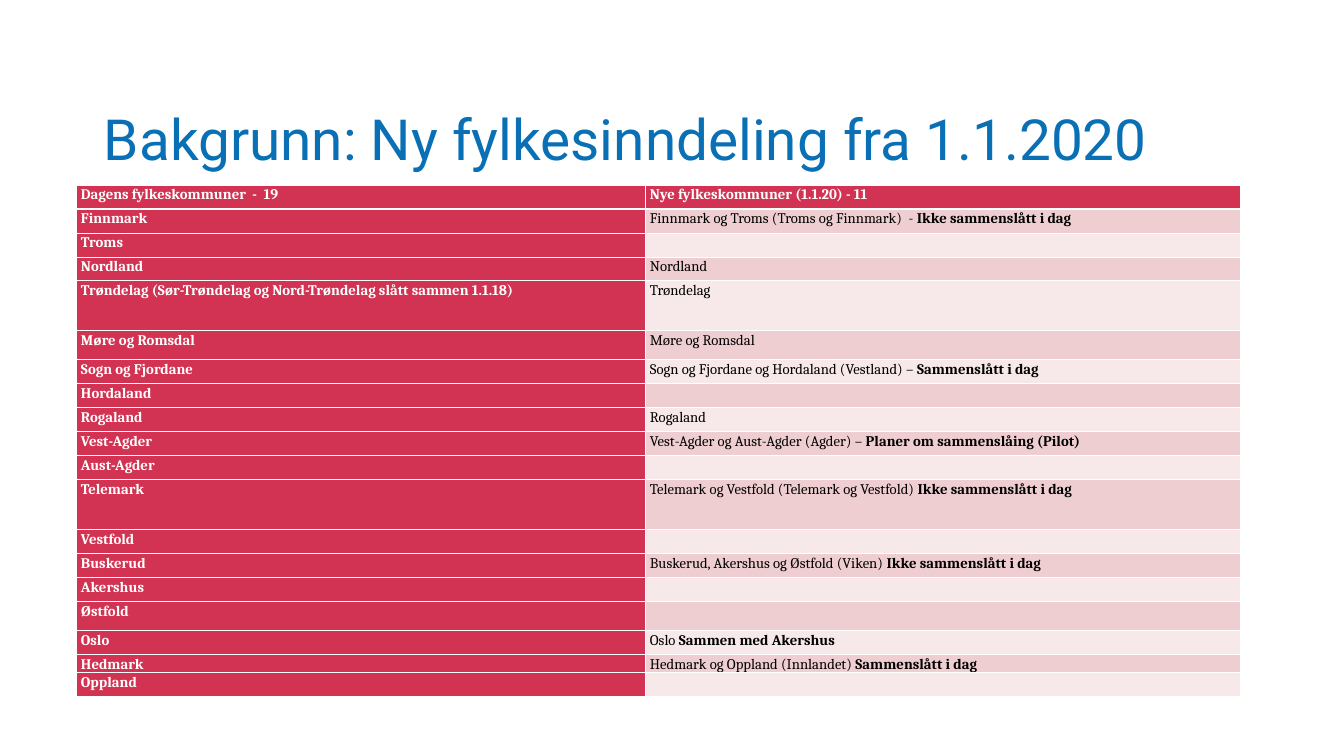
from dataclasses import dataclass

from lxml import etree
from pptx import Presentation
from pptx import util as u
from pptx.dml.color import RGBColor
from pptx.enum import text
from pptx.oxml.ns import qn

PX = 12095


@dataclass(frozen=True)
class Theme:
    blue: str = "0970B5"
    red: str = "D33352"
    rose: str = "EFCED1"
    pale: str = "F7E8E9"
    white: str = "FFFFFF"
    black: str = "000000"
    head: str = "Roboto"
    body: str = "Cambria"
    large: int = 54
    small: int = 14


class Deck:
    def __init__(self, theme, wide, high):
        self.theme = theme
        self.show = Presentation()
        self.show.slide_width, self.show.slide_height = wide * PX, high * PX
        self.slide = self.show.slides.add_slide(self.show.slide_layouts[5])

    def style(self, run, face, size, color, bold=False):
        font = run.font
        font.name, font.size, font.bold = face, u.Pt(size), bold
        font.color.rgb = RGBColor.from_string(color)

    def title(self, words, left, top, wide, high):
        shape = self.slide.shapes.title
        shape.left, shape.top = left * PX, top * PX
        shape.width, shape.height = wide * PX, high * PX
        frame = shape.text_frame
        frame.text = words
        frame.word_wrap = True
        frame.auto_size = text.MSO_AUTO_SIZE.NONE
        frame.vertical_anchor = text.MSO_ANCHOR.BOTTOM
        frame.margin_left = frame.margin_right = 0
        frame.margin_top = frame.margin_bottom = 0
        para = frame.paragraphs[0]
        para.alignment = text.PP_ALIGN.LEFT
        para.line_spacing = 0.9
        look = self.theme
        self.style(para.runs[0], look.head, look.large, look.blue)

    def edge(self, cell, row):
        props = cell._tc.get_or_add_tcPr()
        thick = {(0, "B"): 3, (1, "T"): 3}
        for spot, side in enumerate("LRTB"):
            line = etree.Element(qn(f"a:ln{side}"), w=str(u.Pt(thick.get((row, side), 1))))
            fill = etree.SubElement(line, qn("a:solidFill"))
            etree.SubElement(fill, qn("a:srgbClr"), val=self.theme.white)
            props.insert(spot, line)

    def cell(self, cell, row, col, words):
        look = self.theme
        label = row == 0 or col == 0
        cell.fill.solid()
        fill = look.red if label else look.rose if row % 2 else look.pale
        cell.fill.fore_color.rgb = RGBColor.from_string(fill)
        cell.margin_left = cell.margin_right = 5 * PX
        cell.margin_top = cell.margin_bottom = 0
        self.edge(cell, row)
        plain, _, strong = words.partition("|")
        para = cell.text_frame.paragraphs[0]
        para.line_spacing = 1.07
        para.text = plain
        if strong:
            para.add_run().text = strong
        for spot, run in enumerate(para.runs):
            color = look.white if label else look.black
            self.style(run, look.body, look.small, color, label or spot == 1)

    def table(self, rows, left, top, cols, highs):
        frame = self.slide.shapes.add_table(
            len(rows), len(cols), left * PX, top * PX, sum(cols) * PX, sum(highs) * PX)
        grid = frame.table
        for col, wide in zip(grid.columns, cols):
            col.width = wide * PX
        for row, high in zip(grid.rows, highs):
            row.height = high * PX
        for row, pair in enumerate(rows):
            for col, words in enumerate(pair):
                self.cell(grid.cell(row, col), row, col, words)


COUNTIES = [
    ("Dagens fylkeskommuner  -  19", "Nye fylkeskommuner (1.1.20) - 11"),
    ("Finnmark", "Finnmark og Troms (Troms og Finnmark)  - |Ikke sammenslått i dag"),
    ("Troms", ""),
    ("Nordland", "Nordland"),
    ("Trøndelag (Sør-Trøndelag og Nord-Trøndelag slått sammen 1.1.18)", "Trøndelag"),
    ("Møre og Romsdal", "Møre og Romsdal"),
    ("Sogn og Fjordane", "Sogn og Fjordane og Hordaland (Vestland) – |Sammenslått i dag"),
    ("Hordaland", ""),
    ("Rogaland", "Rogaland"),
    ("Vest-Agder", "Vest-Agder og Aust-Agder (Agder) – |Planer om sammenslåing (Pilot)"),
    ("Aust-Agder", ""),
    ("Telemark", "Telemark og Vestfold (Telemark og Vestfold) |Ikke sammenslått i dag"),
    ("Vestfold", ""),
    ("Buskerud", "Buskerud, Akershus og Østfold (Viken) |Ikke sammenslått i dag"),
    ("Akershus", ""),
    ("Østfold", ""),
    ("Oslo", "Oslo |Sammen med Akershus"),
    ("Hedmark", "Hedmark og Oppland (Innlandet) |Sammenslått i dag"),
    ("Oppland", ""),
]
SPECIAL = {4: 50, 5: 29, 11: 50, 15: 29, 17: 18}


def main():
    deck = Deck(Theme(), 1344, 756)
    deck.title("Bakgrunn: Ny fylkesinndeling fra 1.1.2020", 104, 24, 1146, 149)
    highs = [SPECIAL.get(row, 24) for row in range(len(COUNTIES))]
    deck.table(COUNTIES, 76, 185, [569, 596], highs)
    deck.show.save("out.pptx")


if __name__ == "__main__":
    main()
